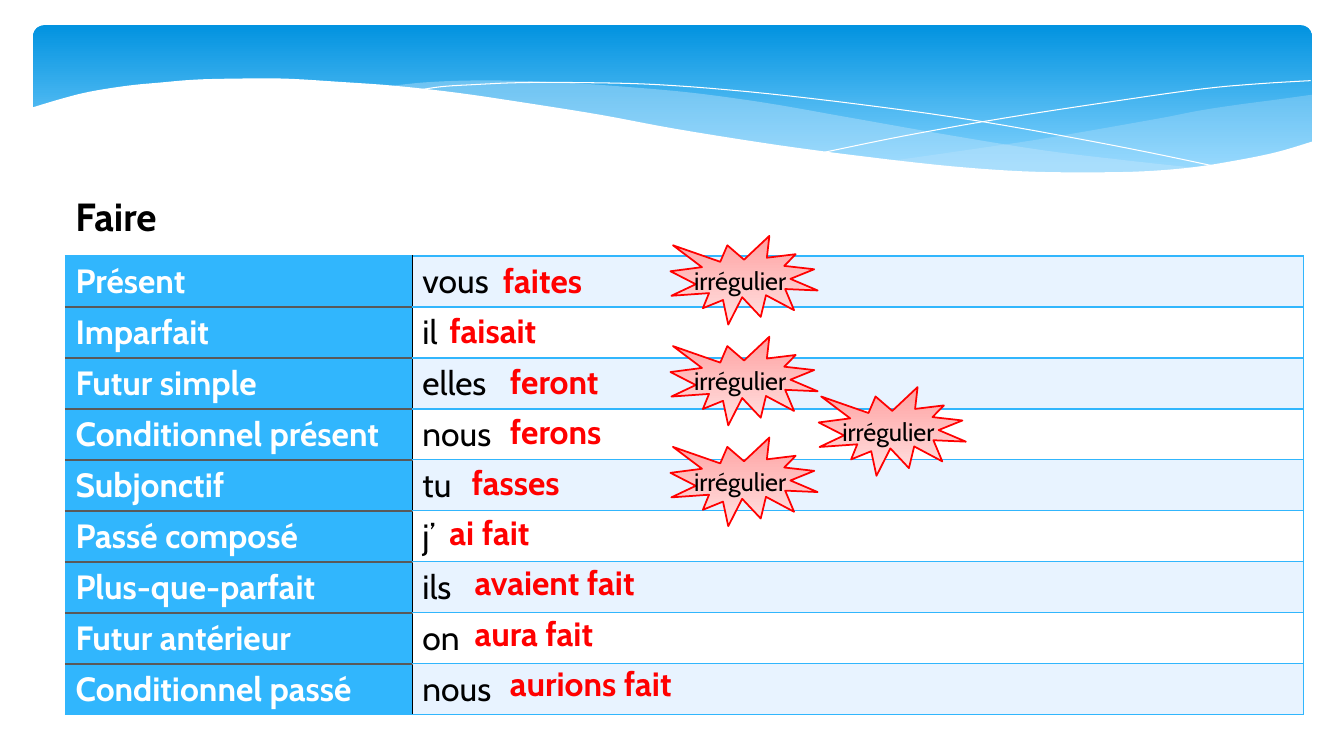
from dataclasses import dataclass

from lxml.etree import SubElement
from pptx import Presentation
from pptx.dml.color import RGBColor
from pptx.enum.shapes import MSO_SHAPE
from pptx.enum.text import MSO_ANCHOR, PP_ALIGN
from pptx.oxml.ns import qn
from pptx.shapes.autoshape import Shape
from pptx.slide import Slide
from pptx.table import _Cell
from pptx.util import Emu, Inches, Pt

WHITE = RGBColor(0xFF, 0xFF, 0xFF)
BLACK = RGBColor(0x00, 0x00, 0x00)
RED = RGBColor(0xFF, 0x00, 0x00)
GREY = RGBColor(0x59, 0x59, 0x59)
BLUE = RGBColor(0x31, 0xB6, 0xFD)
PALE = RGBColor(0xE8, 0xF3, 0xFF)
MIST = RGBColor(0xC6, 0xE7, 0xFC)
SKY_TOP = RGBColor(0x02, 0x93, 0xE0)
SKY_END = RGBColor(0x83, 0xD3, 0xFE)
ROSE_TOP = RGBColor(0xFF, 0xA0, 0xA0)
ROSE_END = RGBColor(0xFF, 0xE3, 0xE3)

FONT = "Cabin"
UNIT = Inches(0.5)
TOP = 5.08
STEPS = 5

Point = tuple[float, float]


@dataclass
class Tense:
    name: str
    who: str
    verb: str
    left: float
    wide: float


@dataclass
class Burst:
    left: float
    row: int


@dataclass
class Wave:
    edges: list[list[Point]]
    fill: RGBColor | None = None
    share: int = 100


TENSES = [
    Tense("Présent", "vous", "faites", 9.78, 3.88),
    Tense("Imparfait", "il", "faisait", 8.72, 3.88),
    Tense("Futur simple", "elles", "feront", 9.92, 3.88),
    Tense("Conditionnel présent", "nous", "ferons", 9.92, 4.92),
    Tense("Subjonctif", "tu", "fasses", 9.16, 4.24),
    Tense("Passé composé", "j’", "ai fait", 8.72, 4.86),
    Tense("Plus-que-parfait", "ils", "avaient fait", 9.22, 4.86),
    Tense("Futur antérieur", "on", "aura fait", 9.22, 4.86),
    Tense("Conditionnel passé", "nous", "aurions fait", 9.92, 4.86),
]

BURSTS = [Burst(13.3, 0), Burst(13.3, 2), Burst(16.24, 3), Burst(13.3, 4)]

WAVES = [
    Wave([
        [(26.02, 1.88), (25.3, 1.98), (24.54, 2.08), (23.76, 2.2), (22.94, 2.36),
         (20.76, 2.74), (19.44, 2.94), (17.64, 3.2)],
        [(17.64, 3.2), (18.8, 3.3), (19.86, 3.38), (21.12, 3.44), (22.26, 3.44),
         (23.26, 3.38), (24.36, 3.24), (25.14, 3.08), (26.02, 2.84)],
    ], MIST, 29),
    Wave([
        [(23.8, 3.34), (22.32, 3.18), (20.68, 2.98), (18.82, 2.68), (16.78, 2.32),
         (15.18, 2.04), (13.72, 1.84), (12.38, 1.72), (11.2, 1.64), (10.12, 1.6),
         (9.18, 1.6), (8.36, 1.64), (7.64, 1.72)],
        [(7.64, 1.72), (8.62, 1.8), (9.66, 1.94), (10.78, 2.12), (11.98, 2.32),
         (14.12, 2.7), (16.04, 3), (17.74, 3.22), (19.26, 3.36), (20.6, 3.44),
         (21.8, 3.46), (22.86, 3.42), (23.8, 3.34)],
    ], MIST, 40),
    Wave([
        [(8.24, 1.8), (8.76, 1.72), (9.4, 1.68), (10.32, 1.64), (11.54, 1.64),
         (13.04, 1.68), (14.84, 1.82), (16.96, 2.06), (19.4, 2.4), (22.16, 2.9),
         (24.2, 3.32)],
    ]),
    Wave([
        [(16.36, 3.02), (17.92, 2.7), (19.94, 2.34), (22.3, 1.98), (23.88, 1.76),
         (25, 1.66), (26, 1.6)],
    ]),
    Wave([
        [(26.06, 2.8), (25.32, 3.02), (24.54, 3.18), (23.66, 3.32), (22.68, 3.4),
         (21.56, 3.42), (20.3, 3.4), (18.88, 3.3), (17.26, 3.12), (15.44, 2.88),
         (13.42, 2.56), (11.92, 2.28), (10.42, 2.04), (9.06, 1.84), (7.8, 1.7),
         (6.66, 1.62), (5.64, 1.56), (4.7, 1.56), (3.88, 1.58), (3.16, 1.64),
         (2.54, 1.7), (1.78, 1.82), (1.22, 1.96), (0.62, 2.14)],
        [(0.62, 4.48), (26.06, 4.48)],
    ], WHITE),
]


def grid(*cells: float) -> list[Emu]:
    return [Emu(round(cell * UNIT)) for cell in cells]


def bend(a: float, b: float, c: float, d: float, t: float) -> float:
    return b + t / 2 * (c - a + t * (2 * a - 5 * b + 4 * c - d + t * (3 * (b - c) + d - a)))


def smooth(edge: list[Point]) -> list[Point]:
    ends = [edge[0], *edge, edge[-1]]
    dots = [
        tuple(bend(*axis, step / STEPS) for axis in zip(*ends[i:i + 4]))
        for i in range(len(edge) - 1)
        for step in range(STEPS)
    ]
    return [*dots, edge[-1]]


def shade(shape: Shape, first: RGBColor, last: RGBColor, end: float = 1) -> None:
    shape.shadow.inherit = False
    shape.fill.gradient()
    shape.fill.gradient_angle = 270
    for stop, tint, place in zip(shape.fill.gradient_stops, (first, last), (0, end)):
        stop.color.rgb = tint
        stop.position = place


def draw_wave(slide: Slide, wave: Wave) -> None:
    dots = [grid(*dot) for edge in wave.edges for dot in smooth(edge)]
    pen = slide.shapes.build_freeform(*dots[0])
    pen.add_line_segments(dots[1:], close=wave.fill is not None)
    shape = pen.convert_to_shape()
    shape.shadow.inherit = False
    if wave.fill is None:
        shape.fill.background()
        shape.line.color.rgb = WHITE
        shape.line.width = Pt(0)
        return
    shape.line.fill.background()
    shape.fill.solid()
    shape.fill.fore_color.rgb = wave.fill
    if wave.share < 100:
        tint = shape._element.spPr.find(qn("a:solidFill"))[0]
        SubElement(tint, qn("a:alpha")).set("val", str(wave.share * 1000))


def write(frame, text: str, size: int, ink: RGBColor, bold: bool) -> None:
    run = frame.paragraphs[0].add_run()
    run.text = text
    run.font.name = FONT
    run.font.size = Pt(size)
    run.font.bold = bold
    run.font.color.rgb = ink


def label(slide: Slide, box: tuple[float, float, float, float], text: str,
          size: int, ink: RGBColor, bold: bool = True) -> Shape:
    shape = slide.shapes.add_textbox(*grid(*box))
    shape.text_frame.word_wrap = True
    write(shape.text_frame, text, size, ink, bold)
    return shape


def fill_cell(cell: _Cell, text: str, ink: RGBColor, bold: bool, back: RGBColor,
              rules: dict[str, tuple[RGBColor, float]]) -> None:
    write(cell.text_frame, text, 24, ink, bold)
    cell.vertical_anchor = MSO_ANCHOR.TOP
    props = cell._tc.get_or_add_tcPr()
    for side, (tint, width) in rules.items():
        rule = SubElement(props, qn(f"a:ln{side}"), w=str(Pt(width)))
        SubElement(SubElement(rule, qn("a:solidFill")), qn("a:srgbClr"), val=str(tint))
    cell.fill.solid()
    cell.fill.fore_color.rgb = back


def draw_table(slide: Slide) -> None:
    count = len(TENSES)
    table = slide.shapes.add_table(count, 2, *grid(1.3, TOP, 24.56, count)).table
    for col, width in zip(table.columns, grid(6.88, 17.68)):
        col.width = width
    thin, dark, seam = (BLUE, 1), (GREY, 1.5), (BLACK, 1)
    for i, tense in enumerate(TENSES):
        head = {"L": thin, "R": seam, "T": dark if i else thin,
                "B": dark if i < count - 1 else thin}
        body = {"L": seam, "R": thin, "T": thin, "B": thin}
        fill_cell(table.cell(i, 0), tense.name, WHITE, True, BLUE, head)
        fill_cell(table.cell(i, 1), tense.who, BLACK, False, WHITE if i % 2 else PALE, body)


def draw_burst(slide: Slide, burst: Burst) -> None:
    top = TOP + burst.row - 0.4
    star = slide.shapes.add_shape(MSO_SHAPE.EXPLOSION1, *grid(burst.left, top, 2.92, 1.76))
    shade(star, ROSE_TOP, ROSE_END)
    star.line.color.rgb = RED
    star.line.width = Pt(1.25)
    note = label(slide, (burst.left + 0.27, top + 0.48, 2.38, 0.8), "irrégulier", 18, BLACK, False)
    note.text_frame.paragraphs[0].alignment = PP_ALIGN.LEFT


def main() -> None:
    deck = Presentation()
    deck.slide_width, deck.slide_height = grid(26.66, 15)
    slide = deck.slides.add_slide(deck.slide_layouts[6])
    band = slide.shapes.add_shape(MSO_SHAPE.ROUNDED_RECTANGLE, *grid(0.66, 0.5, 25.36, 3.12))
    band.adjustments[0] = 0.07
    band.line.fill.background()
    shade(band, SKY_TOP, SKY_END, 0.9)
    for wave in WAVES:
        draw_wave(slide, wave)
    draw_table(slide)
    label(slide, (1.3, 3.72, 8.96, 1.14), "Faire", 28, BLACK)
    for i, tense in enumerate(TENSES):
        label(slide, (tense.left, TOP + i - 0.02, tense.wide, 1), tense.verb, 24, RED)
    for burst in BURSTS:
        draw_burst(slide, burst)
    deck.save("out.pptx")


if __name__ == "__main__":
    main()
